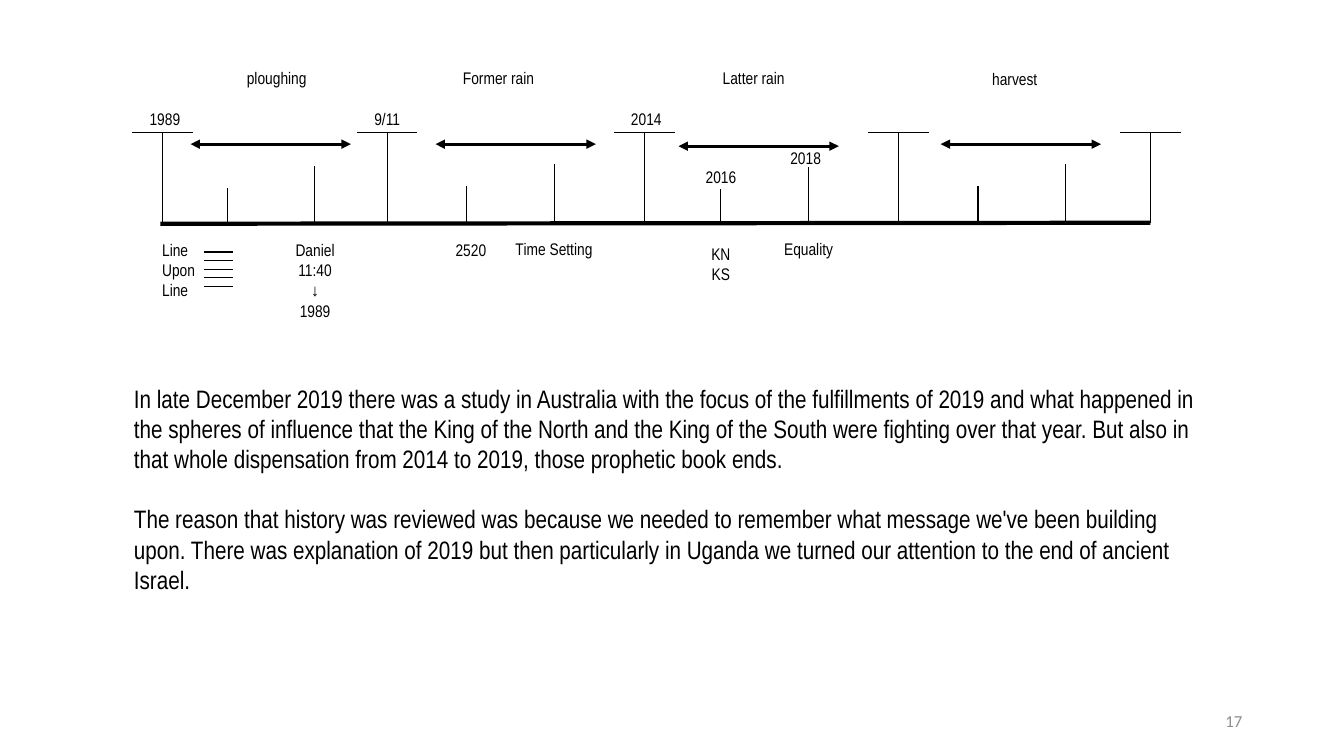
from lxml import etree
from pptx import Presentation
from pptx.dml.color import RGBColor
from pptx.enum.shapes import MSO_CONNECTOR
from pptx.enum.text import MSO_ANCHOR, PP_ALIGN
from pptx.oxml.ns import qn
from pptx.util import Inches, Pt

COLORS = {"ink": "000000", "page_number": "8C8C8C"}
UNIT = Inches(0.1)
LABEL = {"size": Pt(12), "name": "Arial Narrow"}
BODY = {"size": Pt(18), "name": "Arial Narrow"}
PAGE_NUMBER = {"size": Pt(12), "name": "Calibri"}
LABEL_ROWS = 3
THIN, ARROW, AXIS = 0.75, 2.25, 3

MILESTONES = [16.1, 38.4, 63.9, 89.1, 114.1]
WAYMARKS = [
    (22.6, 18.7, 22.2), (31.2, 16.5, 22.1), (46.3, 18.5, 22), (55, 16.3, 21.9),
    (71.5, 18.8, 22.3), (80.2, 16.6, 22.2), (97, 18.5, 22), (105.7, 16.3, 21.9),
]
SPANS = [(18.9, 14.3), (43.2, 14.3), (67.3, 14.5), (93.3, 14.3)]
LABELS = [
    ("1989", 13.8, 10.3, 5.1), ("9/11", 34.8, 10.3, 7.2), ("2014", 60.5, 10.3, 7.2),
    ("2016", 67.9, 16.1, 7.2), ("2018", 76.3, 14.2, 7.2),
    ("ploughing", 20.6, 6.2, 13.7), ("Former rain", 42.6, 6.2, 13.7),
    ("Latter rain", 67.9, 6.2, 13.7), ("harvest", 93.8, 6.3, 13.7),
    ("Daniel\n11:40\n↓\n1989", 28.2, 23.3, 6.1), ("2520", 42.8, 23.3, 7.8),
    ("Time Setting", 48.1, 23.2, 13.7), ("KN\nKS", 67.5, 23.7, 8),
    ("Equality", 76.2, 23.2, 8),
]
STUDY = (
    "In late December 2019 there was a study in Australia with the focus of the "
    "fulfillments of 2019 and what happened in the spheres of influence that the King "
    "of the North and the King of the South were fighting over that year. But also in "
    "that whole dispensation from 2014 to 2019, those prophetic book ends.\n"
    "The reason that history was reviewed was because we needed to remember what "
    "message we've been building upon. There was explanation of 2019 but then "
    "particularly in Uganda we turned our attention to the end of ancient Israel."
)


def grid(*units):
    return [round(unit * UNIT) for unit in units]


def add_line(slide, x1, y1, x2, y2, weight=THIN, arrows=False):
    line = slide.shapes.add_connector(MSO_CONNECTOR.STRAIGHT, *grid(x1, y1, x2, y2))
    line.line.color.rgb = RGBColor.from_string(COLORS["ink"])
    line.line.width = Pt(weight)
    if arrows:
        outline = line.line._get_or_add_ln()
        for end in ("a:headEnd", "a:tailEnd"):
            etree.SubElement(outline, qn(end), type="triangle")
    etree.SubElement(line._element.spPr, qn("a:effectLst"))


def add_text(slide, text, left, top, width, height, font=LABEL, color="ink",
             align=PP_ALIGN.CENTER, gap=0, anchor=MSO_ANCHOR.TOP):
    frame = slide.shapes.add_textbox(*grid(left, top, width, height)).text_frame
    frame.word_wrap = True
    frame.vertical_anchor = anchor
    frame.text = text
    for index, paragraph in enumerate(frame.paragraphs):
        paragraph.alignment = align
        paragraph.space_before = Pt(gap if index else 0)
        for run in paragraph.runs:
            for attribute, value in font.items():
                setattr(run.font, attribute, value)
            run.font.color.rgb = RGBColor.from_string(COLORS[color])


def add_milestone(slide, x):
    add_line(slide, x, 13.2, x, 22.1)
    add_line(slide, x - 3, 13.1, x + 3, 13.1)


def add_timeline(slide):
    add_line(slide, 15.9, 22.2, 114.1, 22.1, AXIS)
    for x in MILESTONES:
        add_milestone(slide, x)
    for x, top, bottom in WAYMARKS:
        add_line(slide, x, top, x, bottom)
    for left, y in SPANS:
        add_line(slide, left, y, left + 15.9, y, ARROW, arrows=True)
    for stroke in range(5):
        y = 25 + stroke * 0.85
        add_line(slide, 20.2, y, 23.1, y)


def add_labels(slide):
    for text, left, top, width in LABELS:
        rows = LABEL_ROWS + 2 * text.count("\n")
        add_text(slide, text, left, top, width, rows)
    add_text(slide, "Line\nUpon\nLine", 15.1, 23.3, 9.4, 7.1, align=PP_ALIGN.LEFT)


def main():
    """Build the timeline slide with its commentary and save it."""
    deck = Presentation()
    deck.slide_width, deck.slide_height = Inches(13.33), Inches(7.5)
    slide = deck.slides.add_slide(deck.slide_layouts[6])
    add_timeline(slide)
    add_labels(slide)
    add_text(slide, STUDY, 12.3, 37.5, 109.1, 27.6, BODY, align=PP_ALIGN.LEFT, gap=21.5)
    add_text(slide, "17", 94.2, 69.5, 30, 4, PAGE_NUMBER, "page_number",
             PP_ALIGN.RIGHT, anchor=MSO_ANCHOR.MIDDLE)
    deck.save("out.pptx")


if __name__ == "__main__":
    main()
